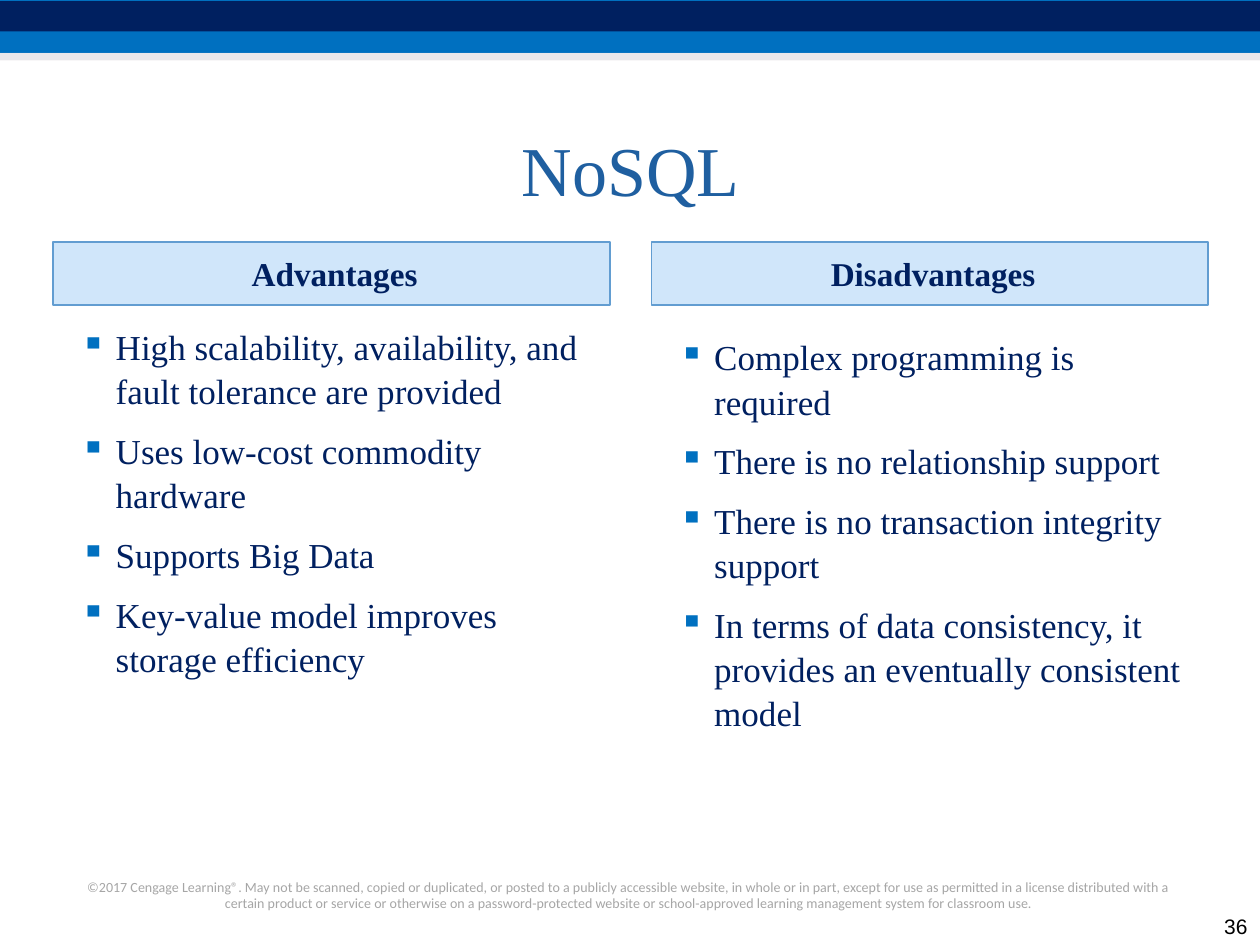
import pptx
import pptx.util
import pptx.dml.color
import pptx.enum.shapes
import pptx.enum.text
import pptx.oxml
import pptx.oxml.ns
from lxml import etree

Inches, Pt = pptx.util.Inches, pptx.util.Pt
RGB = pptx.dml.color.RGBColor.from_string
Align, Anchor = pptx.enum.text.PP_ALIGN, pptx.enum.text.MSO_ANCHOR
qn = pptx.oxml.ns.qn

HUES = {"navy": "002060", "blue": "0070C0", "haze": "D8D3D9", "title": "1F5FA0",
        "head": "469FED", "edge": "629DD1", "gray": "A6A6A6", "black": "000000"}
SERIF = "Times New Roman"

deck = pptx.Presentation()
deck.slide_width, deck.slide_height = Inches(10), Inches(7.5)
slide = deck.slides.add_slide(deck.slide_layouts[6])


def add_rect(left, top, width, height, hue, alpha=None):
    rect = slide.shapes.add_shape(pptx.enum.shapes.MSO_SHAPE.RECTANGLE, Inches(left),
                                  Inches(top), Inches(width), Inches(height))
    rect.shadow.inherit = False
    rect.fill.solid()
    rect.fill.fore_color.rgb = RGB(HUES[hue])
    rect.line.fill.background()
    if alpha:
        color = rect.fill._xPr.find(qn("a:solidFill"))[0]
        etree.SubElement(color, qn("a:alpha"), val=str(alpha * 1000))
    return rect


def add_text(lines, box=None, shape=None, size=20, font=SERIF, hue="navy", bold=False,
             align=Align.LEFT, anchor=Anchor.TOP, indent=0, bullet=None, spacing=None):
    if shape is None:
        shape = slide.shapes.add_textbox(*[Inches(n) for n in box])
    frame = shape.text_frame
    frame.word_wrap = True
    frame.vertical_anchor = anchor
    for i, line in enumerate(lines):
        para = frame.paragraphs[0] if i == 0 else frame.add_paragraph()
        para.text = line
        para.alignment = align
        if spacing:
            para.line_spacing = spacing
            para.space_before = Pt(3 if i else 0)
            para.space_after = Pt(6)
        props = para._p.get_or_add_pPr()
        props.set("marL", str(Inches(indent)))
        if bullet:
            props.set("indent", str(Inches(-0.28)))
            tint = etree.SubElement(props, qn("a:buClr"))
            etree.SubElement(tint, qn("a:srgbClr"), val=HUES["blue"])
            etree.SubElement(props, qn("a:buChar"), char=bullet)
        para.font.size = Pt(size)
        para.font.name = font
        para.font.bold = bold
        para.font.color.rgb = RGB(HUES[hue])


# Top bands
add_rect(0, 0, 10, 0.42, "blue")
add_rect(0, 0.01, 10, 0.24, "navy")
add_rect(0, 0.42, 10, 0.06, "haze", alpha=50)

# Title
add_text(["NoSQL"], box=(0.42, 0.75, 9.17, 1.17), size=40, hue="title",
         align=Align.CENTER, anchor=Anchor.MIDDLE)

# Two columns: heading, left edge, top of list, points
columns = [
    ("Advantages", 0.42, 2.52, [
        "High scalability, availability, and fault tolerance are provided",
        "Uses low-cost commodity hardware",
        "Supports Big Data",
        "Key-value model improves storage efficiency"]),
    ("Disadvantages", 5.17, 2.6, [
        "Complex programming is required",
        "There is no relationship support",
        "There is no transaction integrity support",
        "In terms of data consistency, it provides an eventually consistent model"]),
]
for head, left, top, points in columns:
    bar = add_rect(left, 1.92, 4.42, 0.5, "head", alpha=25)
    bar.line.color.rgb = RGB(HUES["edge"])
    bar.line.width = Pt(1)
    add_text([head], shape=bar, size=19, bold=True, align=Align.CENTER,
             anchor=Anchor.MIDDLE, indent=0.05)
    add_text(points, box=(left, top, 4.42, 4.25), indent=0.4, bullet="▪", spacing=1.05)

# Footer and page number
add_text(["©2017 Cengage Learning®. May not be scanned, copied or duplicated, or posted to a "
          "publicly accessible website, in whole or in part, except for use as permitted in a "
          "license distributed with a certain product or service or otherwise on a "
          "password-protected website or school-approved learning management system for "
          "classroom use."],
         box=(0.58, 6.92, 8.83, 0.37), size=8, font="Calibri", hue="gray", align=Align.CENTER)
add_text(["36"], box=(9.5, 7.17, 0.5, 0.33), size=12, font="Arial", hue="black",
         align=Align.RIGHT, anchor=Anchor.BOTTOM)

deck.save("out.pptx")
